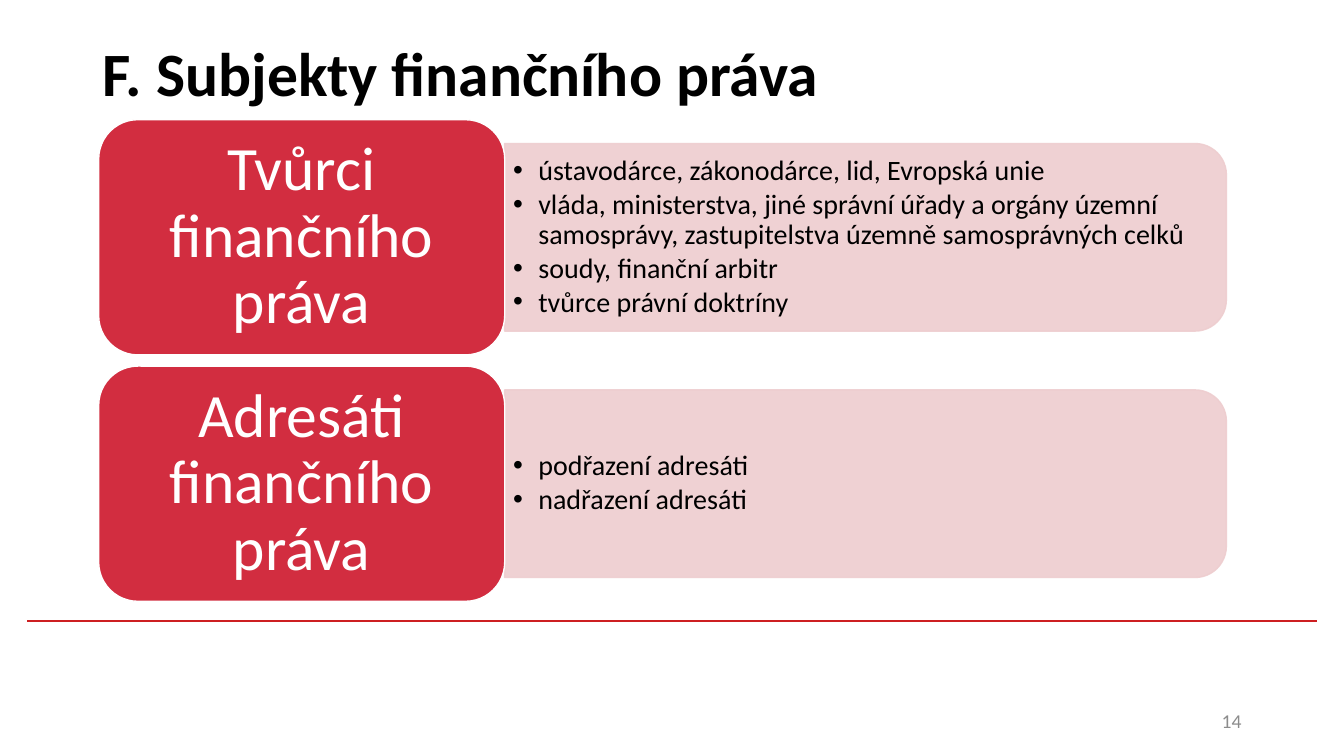
from dataclasses import dataclass

from lxml.etree import SubElement
from pptx import Presentation
from pptx.dml.color import RGBColor
from pptx.enum.shapes import MSO_CONNECTOR, MSO_SHAPE
from pptx.enum.text import MSO_ANCHOR, MSO_AUTO_SIZE, PP_ALIGN
from pptx.oxml.ns import qn
from pptx.util import Pt


@dataclass(frozen=True)
class Theme:
    font: str = "Calibri"
    ink: str = "000000"
    white: str = "FFFFFF"
    label: str = "D22D40"
    panel: str = "EECDCF"
    rule: str = "CD1F21"
    muted: str = "8C8C8C"
    heading_size: int = 44
    list_size: int = 20
    number_size: int = 14


THEME = Theme()

LABEL_LEFT, LABEL_TOP = 70.5, 85.5
LABEL_WIDTH, LABEL_HEIGHT = 290, 168
PANEL_WIDTH, PANEL_HEIGHT = 515.5, 134
LIST_WIDTH, LIST_HEIGHT = 509, 121
ROW_STEP = 176

GROUPS = [
    ("Tvůrci finančního práva", [
        "ústavodárce, zákonodárce, lid, Evropská unie",
        "vláda, ministerstva, jiné správní úřady a orgány územní samosprávy, "
        "zastupitelstva územně samosprávných celků",
        "soudy, finanční arbitr",
        "tvůrce právní doktríny",
    ]),
    ("Adresáti finančního práva", ["podřazení adresáti", "nadřazení adresáti"]),
]


def add_run(paragraph, text, size, color, bold=False):
    run = paragraph.add_run()
    run.text = text
    run.font.name = THEME.font
    run.font.size = Pt(size)
    run.font.bold = bold
    run.font.color.rgb = RGBColor.from_string(color)


def place(shape, left, top, width, height):
    shape.left, shape.top = Pt(left), Pt(top)
    shape.width, shape.height = Pt(width), Pt(height)


def set_frame(frame, horizontal, vertical):
    frame.word_wrap = True
    frame.auto_size = MSO_AUTO_SIZE.NONE
    frame.vertical_anchor = MSO_ANCHOR.MIDDLE
    frame.margin_left = frame.margin_right = Pt(horizontal)
    frame.margin_top = frame.margin_bottom = Pt(vertical)


def add_block(slide, preset, bounds, fill, outline):
    block = slide.shapes.add_shape(preset, *map(Pt, bounds))
    block.shadow.inherit = False
    block.fill.solid()
    block.fill.fore_color.rgb = RGBColor.from_string(fill)
    block.line.color.rgb = RGBColor.from_string(outline)
    block.line.width = Pt(1)
    return block


def add_panel(slide, left, middle):
    bounds = (left + (PANEL_WIDTH - PANEL_HEIGHT) / 2, middle - PANEL_WIDTH / 2,
              PANEL_HEIGHT, PANEL_WIDTH)
    panel = add_block(slide, MSO_SHAPE.ROUND_2_SAME_RECTANGLE, bounds,
                      THEME.panel, THEME.panel)
    panel.rotation = 90
    for color in panel._element.spPr.iter(qn("a:srgbClr")):
        SubElement(color, qn("a:alpha"), val="90000")


def fill_list(slide, members, items, left, middle):
    slide.shapes._spTree.append(members._element)
    place(members, left, middle - LIST_HEIGHT / 2, LIST_WIDTH, LIST_HEIGHT)
    frame = members.text_frame
    set_frame(frame, 6, 3)
    for index, item in enumerate(items):
        paragraph = frame.add_paragraph() if index else frame.paragraphs[0]
        paragraph.level = 1
        paragraph.alignment = PP_ALIGN.LEFT
        paragraph.line_spacing = 0.9
        paragraph.space_before = Pt(0)
        paragraph.space_after = Pt(2.5)
        properties = paragraph._p.get_or_add_pPr()
        properties.set("marL", str(Pt(18)))
        properties.set("indent", str(Pt(-18)))
        SubElement(properties, qn("a:buFont"), typeface="Arial")
        SubElement(properties, qn("a:buChar"), char="•")
        add_run(paragraph, item, THEME.list_size, THEME.ink)


def add_label(slide, text, top):
    label = add_block(slide, MSO_SHAPE.ROUNDED_RECTANGLE,
                      (LABEL_LEFT, top, LABEL_WIDTH, LABEL_HEIGHT),
                      THEME.label, THEME.white)
    set_frame(label.text_frame, 14, 8)
    paragraph = label.text_frame.paragraphs[0]
    paragraph.alignment = PP_ALIGN.CENTER
    paragraph.line_spacing = 0.9
    add_run(paragraph, text, THEME.heading_size, THEME.white)


def add_group(slide, row, members, text, items):
    top = LABEL_TOP + row * ROW_STEP
    middle = top + LABEL_HEIGHT / 2
    right = LABEL_LEFT + LABEL_WIDTH
    add_panel(slide, right, middle)
    fill_list(slide, members, items, right, middle)
    add_label(slide, text, top)


def fill_title(title, text):
    place(title, 66, 1.5, 828, 106)
    set_frame(title.text_frame, 7.2, 3.6)
    paragraph = title.text_frame.paragraphs[0]
    paragraph.alignment = PP_ALIGN.LEFT
    paragraph.line_spacing = 0.9
    add_run(paragraph, text, THEME.heading_size, THEME.ink, bold=True)


def add_rule(slide):
    rule = slide.shapes.add_connector(MSO_CONNECTOR.STRAIGHT, Pt(19.5), Pt(443.5),
                                      Pt(941), Pt(443.5))
    rule.line.color.rgb = RGBColor.from_string(THEME.rule)
    rule.line.width = Pt(1.5)
    SubElement(rule._element.spPr, qn("a:effectLst"))


def add_page_number(slide, number):
    page = slide.shapes.add_textbox(Pt(678), Pt(500.5), Pt(216), Pt(29))
    set_frame(page.text_frame, 7.2, 3.6)
    paragraph = page.text_frame.paragraphs[0]
    paragraph.alignment = PP_ALIGN.RIGHT
    add_run(paragraph, number, THEME.number_size, THEME.muted)


def main():
    deck = Presentation()
    deck.slide_width, deck.slide_height = Pt(960), Pt(540)
    slide = deck.slides.add_slide(deck.slide_layouts.get_by_name("Two Content"))
    title, *lists = slide.placeholders
    add_rule(slide)
    fill_title(title, "F. Subjekty finančního práva")
    add_page_number(slide, "14")
    for row, (members, (text, items)) in enumerate(zip(lists, GROUPS)):
        add_group(slide, row, members, text, items)
    deck.save("out.pptx")


if __name__ == "__main__":
    main()
